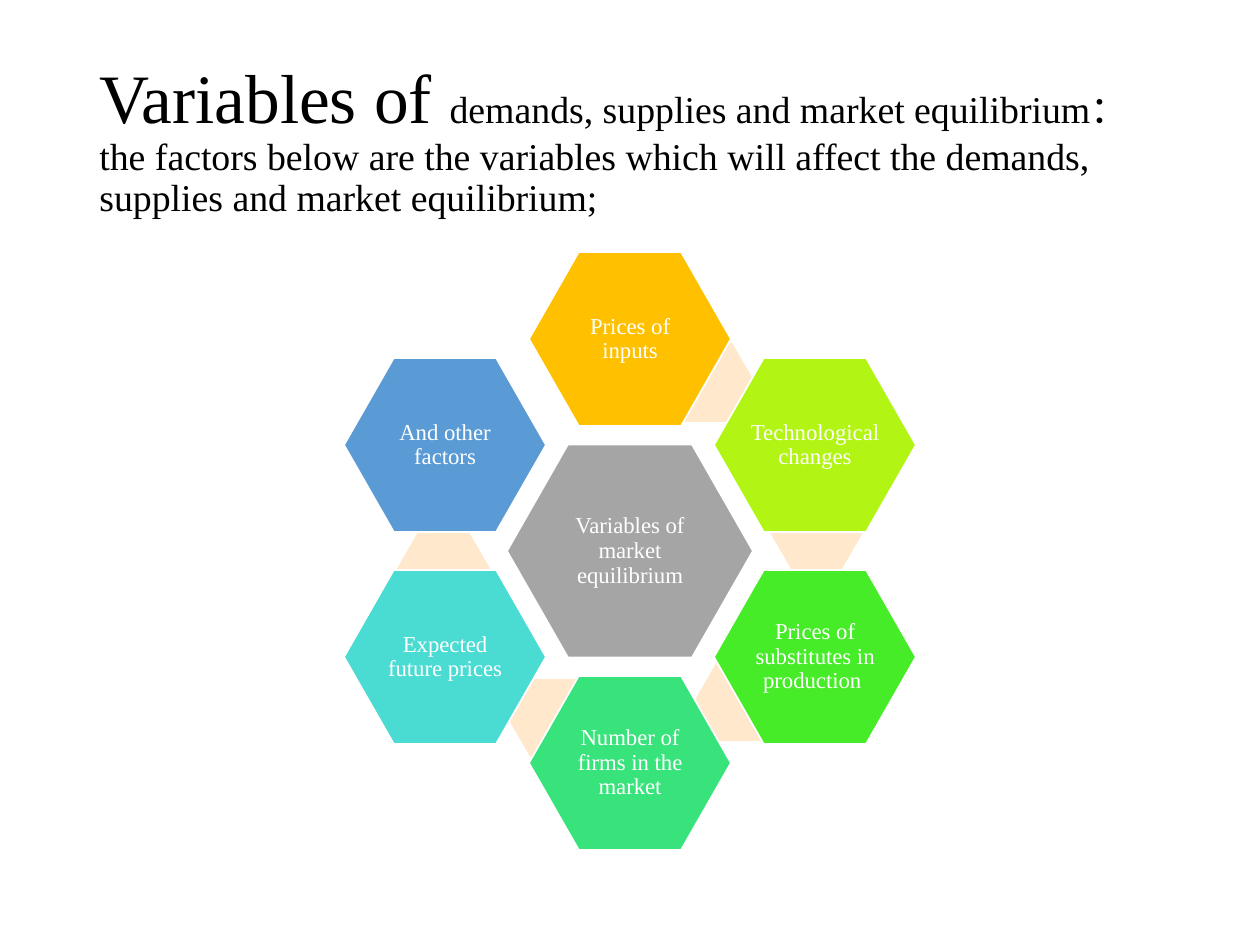
from pptx import Presentation, util as u
from pptx.dml.color import RGBColor
from pptx.enum import shapes, text

EMU_PER_PX = 914400 / 126
FONT = "Times New Roman"
COLORS = {
    "ink": "000000", "white": "FFFFFF", "bridge": "FFE8CC", "grey": "A5A5A5",
    "amber": "FFC000", "lime": "B2F514", "green": "46EC27",
    "emerald": "39E37B", "turquoise": "4ADCD2", "blue": "5B9BD5",
}
CENTER_X, CENTER_Y = 630, 551
COLUMN, ROW = 185, 106  # steps from the core to the ring
CORE_SIZE, RING_SIZE, BRIDGE_SIZE = (246, 213), (202, 174), (93, 79)

TITLE_RUNS = [
    ("Variables of ", 39.6),
    ("demands, supplies and market equilibrium：the factors below are the "
     "variables which will affect the demands, supplies and market equilibrium;", 21.6),
]
# label, colour, column step, row step, top left of the bridge behind it
FACTORS = [
    ("Prices of inputs", "amber", 0, -2, (662, 343)),
    ("Technological changes", "lime", 1, -1, (770, 493)),
    ("Prices of substitutes in production ", "green", 1, 1, (694, 662)),
    ("Number of firms in the market", "emerald", 0, 2, (508, 679)),
    ("Expected future prices", "turquoise", -1, 1, (397, 529)),
    ("And other factors", "blue", -1, -1, None),
]


def px(*lengths):
    return [u.Emu(round(length * EMU_PER_PX)) for length in lengths]


def rgb(name):
    return RGBColor.from_string(COLORS[name])


class Deck:
    def __init__(self):
        self.prs = Presentation()
        self.prs.slide_width, self.prs.slide_height = px(1260, 945)
        self.slide = self.prs.slides.add_slide(self.prs.slide_layouts[6])

    def words(self, left, top, width, height, runs, color, align, inset):
        box = self.slide.shapes.add_textbox(*px(left, top, width, height))
        frame = box.text_frame
        frame.word_wrap = True
        frame.vertical_anchor = text.MSO_ANCHOR.MIDDLE
        side, end = px(*inset)
        frame.margin_left = frame.margin_right = side
        frame.margin_top = frame.margin_bottom = end
        paragraph = frame.paragraphs[0]
        paragraph.alignment = align
        paragraph.line_spacing = 0.9
        for wording, size in runs:
            run = paragraph.add_run()
            run.text = wording
            run.font.name = FONT
            run.font.size = u.Pt(size)
            run.font.color.rgb = rgb(color)

    def hexagon(self, left, top, size, fill, adj, outlined):
        hexagon = self.slide.shapes.add_shape(
            shapes.MSO_SHAPE.HEXAGON, *px(left, top, *size))
        hexagon.adjustments[0] = adj
        hexagon.shadow.inherit = False
        hexagon.fill.solid()
        hexagon.fill.fore_color.rgb = rgb(fill)
        if outlined:
            hexagon.line.color.rgb = rgb("white")
            hexagon.line.width = u.Pt(1)
        else:
            hexagon.line.fill.background()

    def bridge(self, left, top):
        self.hexagon(left, top, BRIDGE_SIZE, "bridge", 0.289, False)

    def cell(self, x, y, size, fill, label):
        """Hexagon centred on x, y with its label in the middle two thirds."""
        width, height = size
        self.hexagon(x - width / 2, y - height / 2, size, fill, 0.286, True)
        self.words(x - width / 3, y - height / 3, width * 2 / 3, height * 2 / 3,
                   [(label, 13)], "white", text.PP_ALIGN.CENTER, (2, 2))


def main():
    deck = Deck()
    deck.words(87, 50, 1086, 183, TITLE_RUNS, "ink", text.PP_ALIGN.LEFT, (12.6, 6.3))
    deck.cell(CENTER_X, CENTER_Y, CORE_SIZE, "grey", "Variables of market equilibrium")
    for label, fill, column, row, bridge in FACTORS:
        if bridge:
            deck.bridge(*bridge)
        deck.cell(CENTER_X + column * COLUMN, CENTER_Y + row * ROW,
                  RING_SIZE, fill, label)
    deck.prs.save("out.pptx")


if __name__ == "__main__":
    main()
